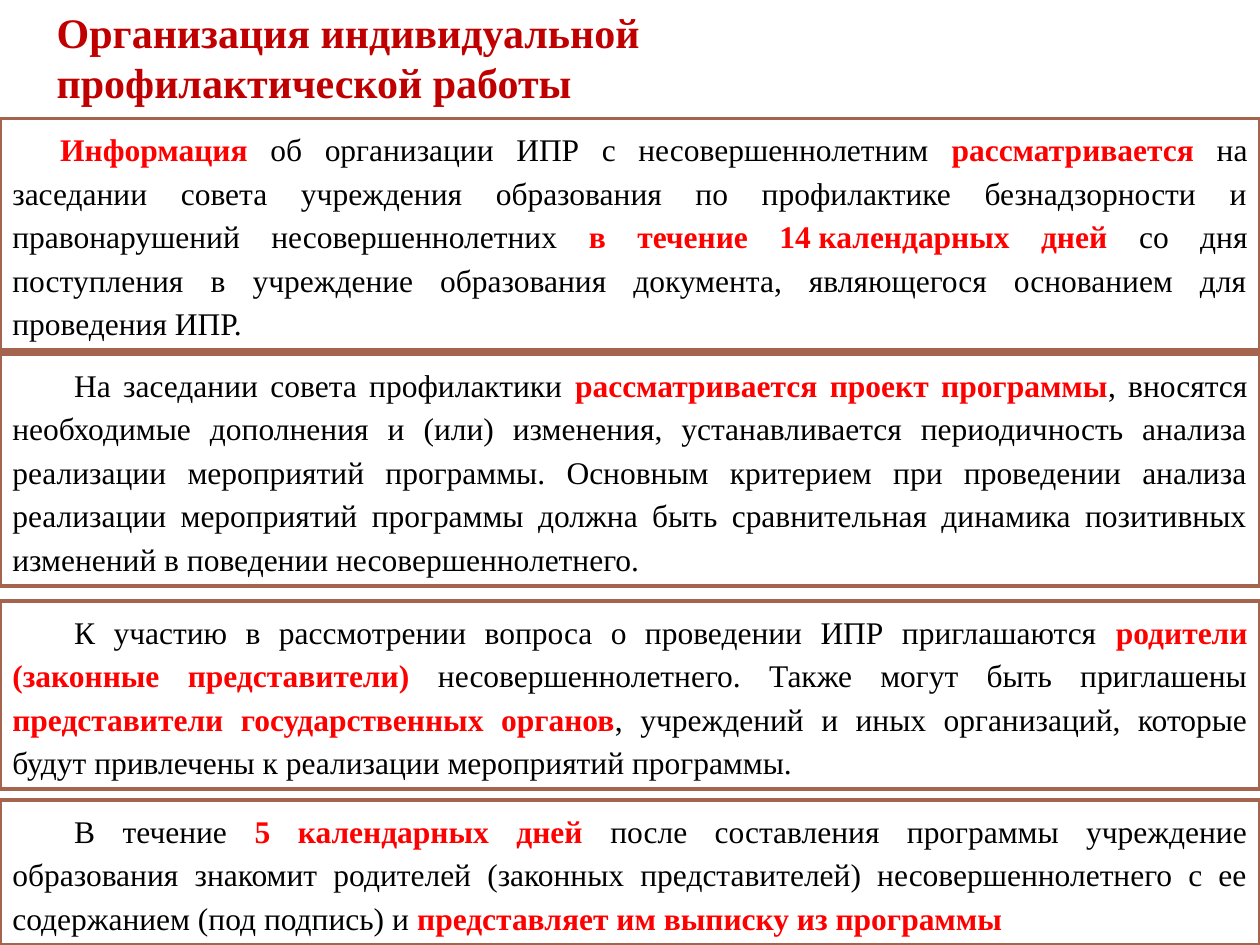
from lxml import etree
from pptx import Presentation
from pptx import util as u
from pptx.dml import color
from pptx.enum import shapes, text
from pptx.oxml import ns

FONT = "Times New Roman"
BLACK, RED, DARK_RED = "000000", "FF0000", "C00000"
WHITE, BROWN = "FFFFFF", "A5644E"

TITLE = "Организация индивидуальной профилактической работы"

# Top, height, first-line indent, text; words between asterisks are emphasised
PANELS = [
    (0.94, 1.84, 0.38,
     "*Информация* об организации ИПР с несовершеннолетним *рассматривается* на заседании "
     "совета учреждения образования по профилактике безнадзорности и правонарушений "
     "несовершеннолетних *в течение 14\u00a0календарных дней *со дня поступления в учреждение "
     "образования документа, являющегося основанием для проведения ИПР."),
    (2.81, 1.84, 0.49,
     "На заседании совета профилактики *рассматривается проект программы*, вносятся "
     "необходимые дополнения и (или) изменения, устанавливается периодичность анализа "
     "реализации мероприятий программы. Основным критерием при проведении анализа реализации "
     "мероприятий программы должна быть сравнительная динамика позитивных изменений в "
     "поведении несовершеннолетнего."),
    (4.77, 1.49, 0.49,
     "К участию в рассмотрении вопроса о проведении ИПР приглашаются *родители (законные "
     "представители)* несовершеннолетнего. Также могут быть приглашены *представители "
     "государственных органов*, учреждений и иных организаций, которые будут привлечены к "
     "реализации мероприятий программы."),
    (6.35, 1.15, 0.49,
     "В течение *5 календарных дней *после составления программы учреждение образования "
     "знакомит родителей (законных представителей) несовершеннолетнего с ее содержанием "
     "(под подпись) и *представляет им выписку из программы*"),
]


def rgb(value):
    return color.RGBColor.from_string(value)


def apply_format(target, values):
    for name, value in values.items():
        setattr(target, name, value)


def add_run(paragraph, content, size, colour, bold):
    run = paragraph.add_run()
    run.text = content
    apply_format(run.font, {"name": FONT, "size": u.Pt(size), "bold": bold})
    run.font.color.rgb = rgb(colour)


def set_title(slide):
    title = slide.shapes.title
    apply_format(title, {"left": u.Inches(0.35), "top": u.Inches(-0.01),
                         "width": u.Inches(7.09), "height": u.Inches(0.92)})
    apply_format(title.text_frame, {"word_wrap": True,
                                    "auto_size": text.MSO_AUTO_SIZE.NONE,
                                    "vertical_anchor": text.MSO_ANCHOR.MIDDLE})
    paragraph = title.text_frame.paragraphs[0]
    paragraph.alignment = text.PP_ALIGN.LEFT
    add_run(paragraph, TITLE, 24, DARK_RED, True)


def add_panel(slide, top, height, indent, content):
    panel = slide.shapes.add_shape(shapes.MSO_SHAPE.RECTANGLE, 0, u.Inches(top),
                                   u.Inches(10), u.Inches(height))
    panel.shadow.inherit = False
    panel.fill.solid()
    panel.fill.fore_color.rgb = rgb(WHITE)
    panel.line.color.rgb = rgb(BROWN)
    panel.line.width = u.Pt(2)
    apply_format(panel.text_frame, {"word_wrap": True,
                                    "auto_size": text.MSO_AUTO_SIZE.SHAPE_TO_FIT_TEXT,
                                    "vertical_anchor": text.MSO_ANCHOR.TOP})
    paragraph = panel.text_frame.paragraphs[0]
    apply_format(paragraph, {"alignment": text.PP_ALIGN.JUSTIFY, "line_spacing": 1.15})
    # First-line indent
    properties = paragraph._p.get_or_add_pPr()
    properties.set("marL", "0")
    properties.set("indent", str(u.Inches(indent)))
    etree.SubElement(properties, ns.qn("a:buNone"))
    # Every second part is emphasised
    for index, part in enumerate(content.split("*")):
        if part:
            emphasised = index % 2 == 1
            add_run(paragraph, part, 18, RED if emphasised else BLACK, emphasised)


def main():
    presentation = Presentation()
    apply_format(presentation, {"slide_width": u.Inches(10), "slide_height": u.Inches(7.5)})
    # Title Only layout
    slide = presentation.slides.add_slide(presentation.slide_layouts[5])
    set_title(slide)
    for panel in PANELS:
        add_panel(slide, *panel)
    presentation.save("out.pptx")


if __name__ == "__main__":
    main()
